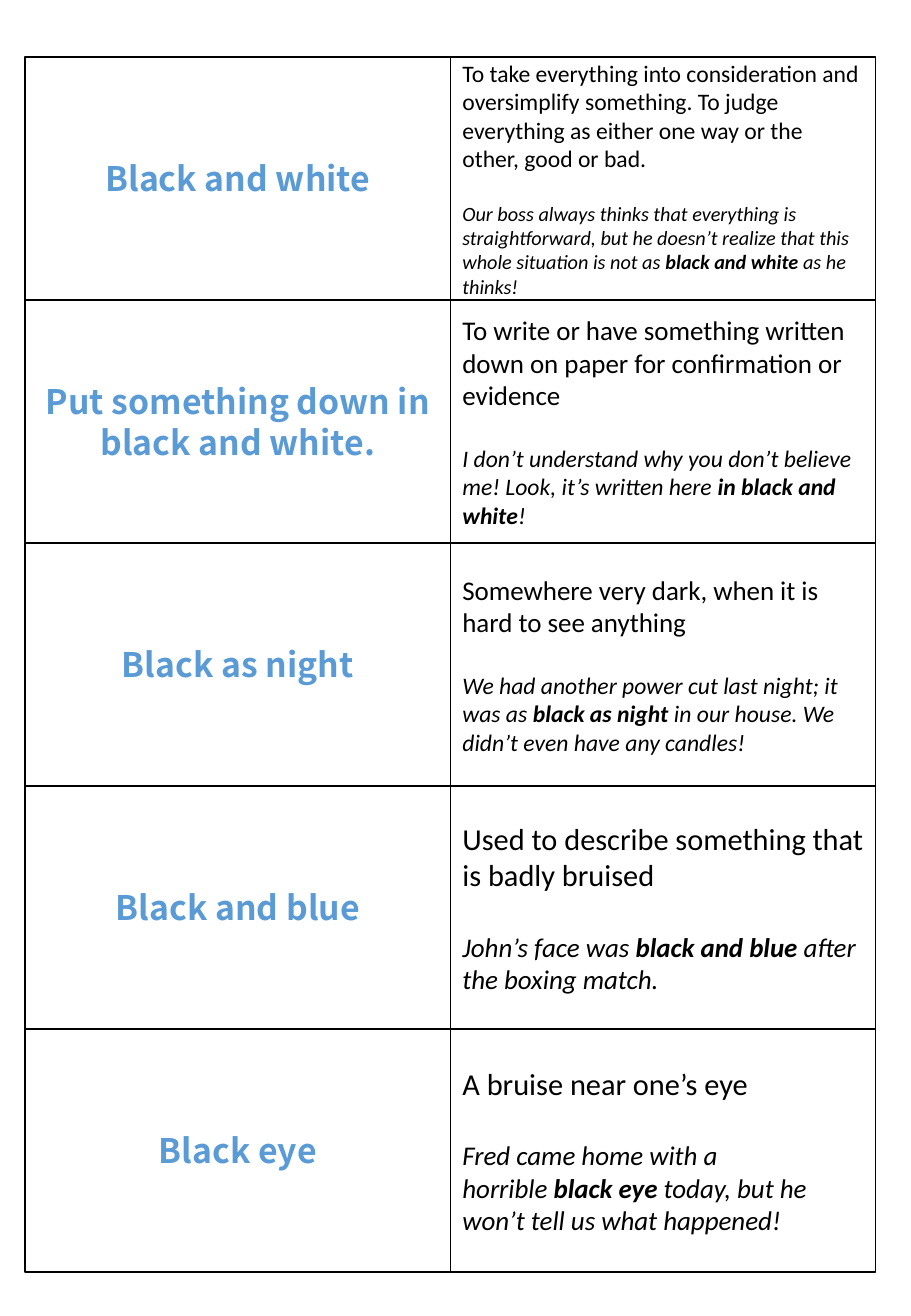
"""Build a sheet of black idiom cards with meanings and examples."""
from pptx import Presentation
from pptx import util as u
from pptx.dml.color import RGBColor
from pptx.enum import shapes, text

GAP = chr(160)
CARDS = [
    ("Black and white", 14,
     "To take everything into consideration and oversimplify something. "
     "To judge everything as either one way or the other, good or bad.", 12,
     ("Our boss always thinks that everything is straightforward, but he "
      f"doesn’t realize that this whole situation is not as{GAP}",
      "black and white", f"{GAP}as he thinks!")),
    ("Put something down in black and white.", 16,
     "To write or have something written down on paper for confirmation or evidence", 14,
     (f"I don’t understand why you don’t believe me! Look, it’s written here{GAP}",
      "in black and white", "!")),
    ("Black as night", 16,
     "Somewhere very dark, when it is hard to see anything", 14,
     (f"We had another power cut last night; it was as{GAP}",
      "black as night", f"{GAP}in our house. We didn’t even have any candles!")),
    ("Black and blue", 18,
     "Used to describe something that is badly bruised", 16,
     (f"John’s face was{GAP}", "black and blue", f"{GAP}after the boxing match.")),
    ("Black eye", 18,
     "A bruise near one’s eye", 16,
     (f"Fred came home with a horrible{GAP}",
      "black eye", f"{GAP}today, but he won’t tell us what happened!")),
]
THEME = {
    "fill": RGBColor(255, 255, 255),
    "ink": RGBColor(0, 0, 0),
    "blue": RGBColor(0x5B, 0x9B, 0xD5),
    "head": "Noto Sans CJK KR",
    "body": "Calibri",
    "title": 20,
    "line": 1,
    "lead": 1.22,
}
LEFT, TOP, WIDE, HIGH = 0.53, 1.19, 8.89, 5.08


def add_box(slide, row, col):
    box = slide.shapes.add_shape(
        shapes.MSO_SHAPE.RECTANGLE, u.Cm(LEFT + col * WIDE),
        u.Cm(TOP + row * HIGH), u.Cm(WIDE), u.Cm(HIGH))
    box.shadow.inherit = False
    box.fill.solid()
    box.fill.fore_color.rgb = THEME["fill"]
    box.line.color.rgb = THEME["ink"]
    box.line.width = u.Pt(THEME["line"])
    frame = box.text_frame
    frame.word_wrap = True
    frame.vertical_anchor = text.MSO_ANCHOR.MIDDLE
    return frame


def add_run(para, words, face, size, ink, bold=False, slant=False):
    run = para.add_run()
    run.text = words
    font = run.font
    font.name, font.size = face, u.Pt(size)
    font.bold, font.italic = bold, slant
    font.color.rgb = ink


def add_card(slide, row, card):
    idiom, big, sense, small, parts = card
    para = add_box(slide, row, 0).paragraphs[0]
    para.alignment = text.PP_ALIGN.CENTER
    add_run(para, idiom, THEME["head"], THEME["title"], THEME["blue"], bold=True)

    frame = add_box(slide, row, 1)
    para = frame.paragraphs[0]
    para.alignment = text.PP_ALIGN.LEFT
    add_run(para, sense, THEME["body"], big, THEME["ink"])
    para = frame.add_paragraph()
    para.alignment = text.PP_ALIGN.LEFT
    para.space_before = u.Pt(round(big * THEME["lead"], 1))
    for spot, words in enumerate(parts):
        add_run(para, words, THEME["body"], small, THEME["ink"],
                bold=spot == 1, slant=True)


def main():
    deck = Presentation()
    deck.slide_width, deck.slide_height = u.Cm(19.05), u.Cm(27.51)
    slide = deck.slides.add_slide(deck.slide_layouts[6])
    for row, card in enumerate(CARDS):
        add_card(slide, row, card)
    deck.save("out.pptx")


if __name__ == "__main__":
    main()
